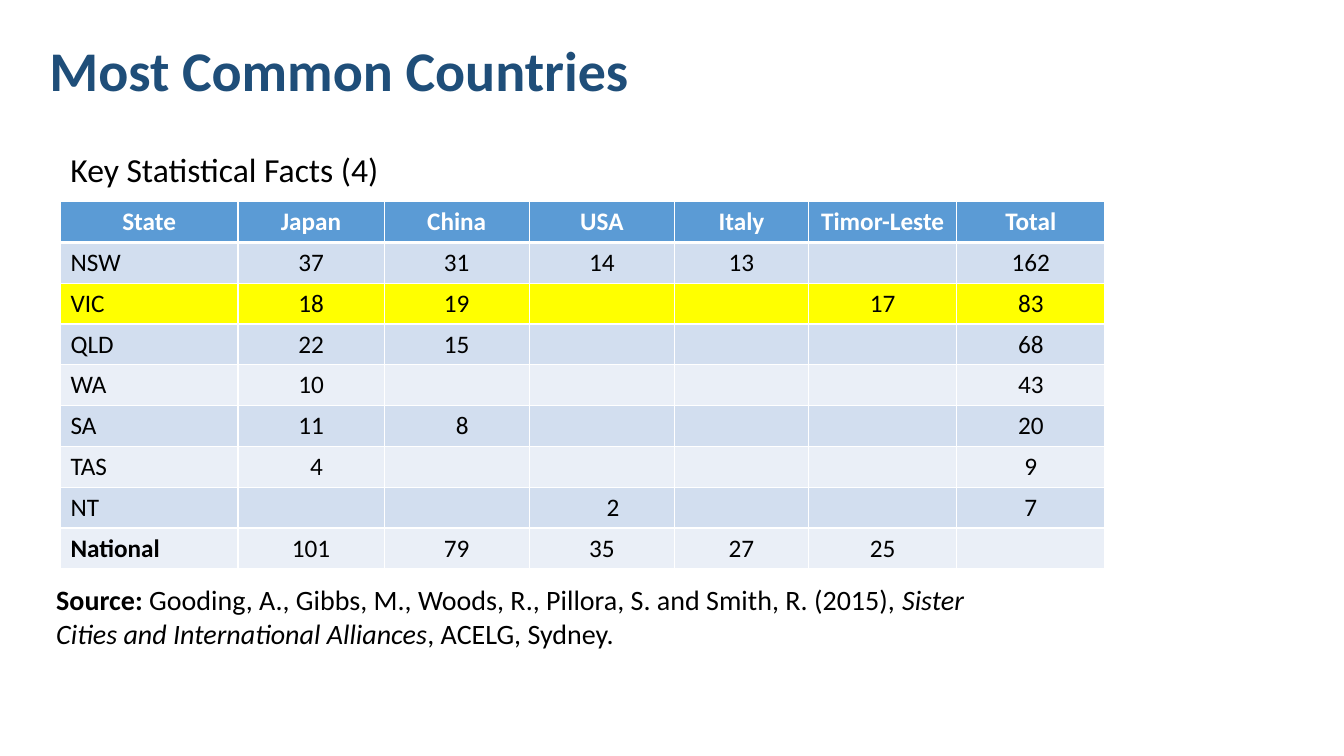
import pptx
import pptx.dml.color
import pptx.enum.text
import pptx.oxml
import pptx.oxml.ns
import pptx.util
from pptx.util import Inches

FONT = "Calibri"
BLACK, WHITE, NAVY = "000000", "FFFFFF", "1F4E79"
HEADER_BLUE, HIGHLIGHT = "5B9BD5", "FFFF00"
BANDS = ["D2DEEF", "EAEFF7"]
COLUMN_WIDTHS = [1.76, 1.45, 1.44, 1.44, 1.33, 1.47, 1.47]
ROW_HEIGHT = 0.405
ROWS = [
    ["State", "Japan", "China", "USA", "Italy", "Timor-Leste", "Total"],
    ["NSW", "37", "31", "14", "13", "", "162"],
    ["VIC", "18", "19", "", "", "17", "83"],
    ["QLD", "22", "15", "", "", "", "68"],
    ["WA", "10", "", "", "", "", "43"],
    ["SA", "11", "8", "", "", "", "20"],
    ["TAS", "4", "", "", "", "", "9"],
    ["NT", "", "", "2", "", "", "7"],
    ["National", "101", "79", "35", "27", "25", ""],
]
DIGIT_INDENTS = {("SA", "China"): 0.21, ("TAS", "Japan"): 0.21, ("NT", "USA"): 0.32}


def rgb(color):
    """Return the colour for a hex string."""
    return pptx.dml.color.RGBColor.from_string(color)


def format_font(font, size, color, bold=None):
    """Set the typeface, size, colour and weight of a font."""
    font.name = FONT
    font.size = pptx.util.Pt(size)
    font.color.rgb = rgb(color)
    font.bold = bold


def fill_text(shape, runs, size, color=BLACK, bold=None):
    """Write one left-aligned paragraph of (text, bold, italic) runs."""
    frame = shape.text_frame
    frame.word_wrap = True
    frame.vertical_anchor = pptx.enum.text.MSO_ANCHOR.TOP
    frame.auto_size = pptx.enum.text.MSO_AUTO_SIZE.SHAPE_TO_FIT_TEXT
    paragraph = frame.paragraphs[0]
    paragraph.alignment = pptx.enum.text.PP_ALIGN.LEFT
    paragraph.line_spacing = 1.0
    format_font(paragraph.font, size, color, bold)
    for text, run_bold, run_italic in runs:
        run = paragraph.add_run()
        run.text = text
        run.font.bold = run_bold
        run.font.italic = run_italic


def add_title(slide, text):
    """Place and format the title placeholder."""
    title = slide.shapes.title
    title.left, title.top = Inches(0.39), Inches(0.3)
    title.width, title.height = Inches(10.78), Inches(0.77)
    fill_text(title, [(text, None, None)], 40, NAVY, True)


def add_text(slide, left, top, width, height, runs, size):
    """Add a text box."""
    box = slide.shapes.add_textbox(Inches(left), Inches(top), Inches(width), Inches(height))
    fill_text(box, runs, size)


def set_borders(cell, top, bottom):
    """Draw white cell borders, with top and bottom widths in points."""
    properties = cell._tc.get_or_add_tcPr()
    for side, width in {"L": 1, "R": 1, "T": top, "B": bottom}.items():
        properties.append(pptx.oxml.parse_xml(
            f'<a:ln{side} {pptx.oxml.ns.nsdecls("a")} w="{pptx.util.Pt(width)}">'
            f'<a:solidFill><a:srgbClr val="{WHITE}"/></a:solidFill></a:ln{side}>'))


def row_fill(row):
    """Return the fill colour of a table row."""
    if row == 0:
        return HEADER_BLUE
    return HIGHLIGHT if ROWS[row][0] == "VIC" else BANDS[(row - 1) % 2]


def format_cell(cell, row, column):
    """Fill one table cell with its text, colour and borders."""
    header = row == 0
    label = ROWS[row][0]
    set_borders(cell, 3 if row == 1 else 1, 3 if header else 1)
    cell.fill.solid()
    cell.fill.fore_color.rgb = rgb(row_fill(row))
    cell.text = ROWS[row][column]
    if header:
        cell.vertical_anchor = pptx.enum.text.MSO_ANCHOR.MIDDLE
    cell.margin_left = Inches(DIGIT_INDENTS.get((label, ROWS[0][column]), 0.1))
    paragraph = cell.text_frame.paragraphs[0]
    centred = header or column > 0
    alignment = pptx.enum.text.PP_ALIGN
    paragraph.alignment = alignment.CENTER if centred else alignment.LEFT
    bold = header or (label == "National" and column == 0)
    format_font(paragraph.font, 18, WHITE if header else BLACK, bold)


def add_country_table(slide):
    """Add the table of sister cities by state and country."""
    table = slide.shapes.add_table(
        len(ROWS), len(COLUMN_WIDTHS), Inches(0.6), Inches(2),
        Inches(sum(COLUMN_WIDTHS)), Inches(ROW_HEIGHT * len(ROWS))).table
    for column, width in enumerate(COLUMN_WIDTHS):
        table.columns[column].width = Inches(width)
    for row in range(len(ROWS)):
        table.rows[row].height = Inches(ROW_HEIGHT)
        for column in range(len(COLUMN_WIDTHS)):
            format_cell(table.cell(row, column), row, column)


def main():
    """Build and save the slide."""
    presentation = pptx.Presentation()
    presentation.slide_width = Inches(13.33)
    presentation.slide_height = Inches(7.5)
    slide = presentation.slides.add_slide(presentation.slide_layouts[5])
    add_title(slide, "Most Common Countries")
    add_text(slide, 0.6, 1.43, 3.42, 0.5, [("Key Statistical Facts (4)", None, None)], 24)
    add_country_table(slide)
    add_text(slide, 0.46, 5.73, 9.86, 0.77, [
        ("Source:", True, None),
        (" Gooding, A., Gibbs, M., Woods, R., Pillora, S. and Smith, R. (2015), ", None, None),
        ("Sister Cities and International Alliances", None, True),
        (", ACELG, Sydney.", None, None),
    ], 20)
    presentation.save("out.pptx")


if __name__ == "__main__":
    main()
